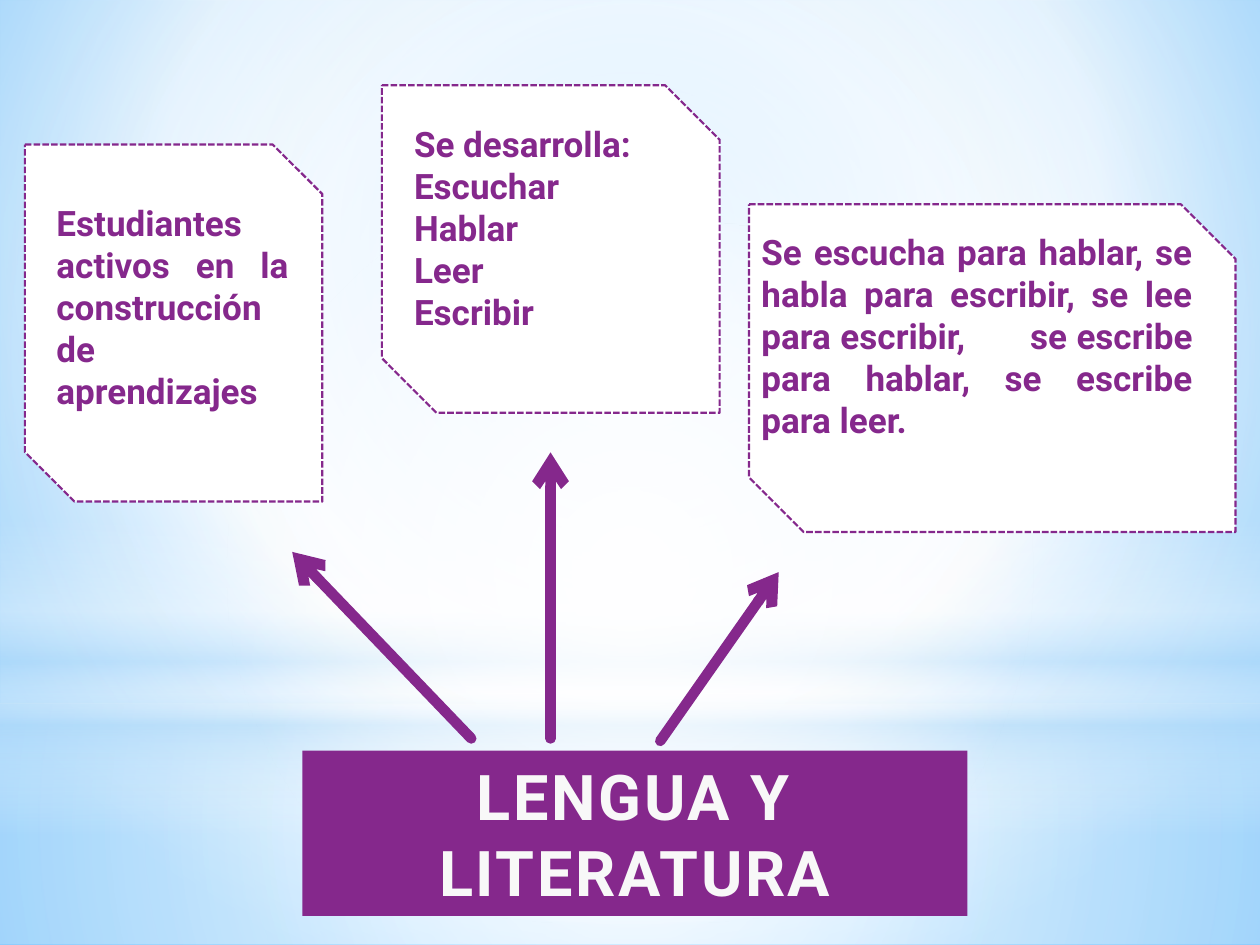
from lxml.etree import SubElement
from pptx import Presentation
from pptx.dml.color import RGBColor
from pptx.enum.dml import MSO_LINE
from pptx.enum.shapes import MSO_CONNECTOR, MSO_SHAPE
from pptx.enum.text import MSO_ANCHOR, MSO_AUTO_SIZE, PP_ALIGN
from pptx.oxml.ns import qn
from pptx.util import Pt

PURPLE = RGBColor(0x85, 0x28, 0x8C)
OFF_WHITE = RGBColor(0xF8, 0xF8, 0xF8)
WHITE = RGBColor(0xFF, 0xFF, 0xFF)
PALE_BLUE = RGBColor(0xB4, 0xDC, 0xFA)
SKY = RGBColor(0x9E, 0xD5, 0xFF)
DEEP_SKY = RGBColor(0x5B, 0xB9, 0xFF)
FONT = "Roboto"
CENTRE = (50, 50, 50, 50)

# Backdrop layers: preset, place, stops (position, colour, opacity), focus
LAYERS = [
    (MSO_SHAPE.RECTANGLE, (0, 402, 720, 138),
     [(0, WHITE, 91), (37, WHITE, 76), (100, PALE_BLUE, 79)], CENTRE),
    (MSO_SHAPE.RECTANGLE, (0, 0, 720, 402),
     [(0, WHITE, 89), (48, WHITE, 62), (100, PALE_BLUE, 79)], CENTRE),
    (MSO_SHAPE.RECTANGLE, (0, 297, 720, 180),
     [(0, WHITE, 0), (29, WHITE, 30), (45, PALE_BLUE, 40),
      (55, WHITE, 26), (65, PALE_BLUE, 60), (100, WHITE, 0)], None),
    (MSO_SHAPE.OVAL, (0, 126, 720, 402),
     [(0, WHITE, 100), (56, WHITE, 0)], CENTRE),
]

ARROWS = [
    ((269.3, 422), (167, 315.4)),
    ((314.6, 422), (314.6, 258.5)),
    ((377.3, 423.4), (445, 326.9)),
]

# Cards: frame place, text place, paragraphs, tab stop
CARDS = [
    ((14.2, 82.6, 170, 204), (25.2, 111.6, 146.9, 128.2),
     ["Estudiantes activos en la construcción de aprendizajes"], None),
    ((218.2, 48.7, 193, 187.2), (229.5, 66.2, 167, 128.2),
     ["Se desarrolla:", "Escuchar", "Hablar", "Leer", "Escribir"], None),
    ((428, 116.8, 278, 187.2), (428, 128.2, 260.6, 157.7),
     ["Se escucha para hablar, se habla para escribir, se lee para "
      "escribir,\tse escribe para hablar, se escribe para leer."], 153),
]


def set_gradient(element, stops, focus):
    """Turn the first solid fill of the element into a gradient."""
    solid = next(element.iter(qn("a:solidFill")))
    gradient = solid.makeelement(qn("a:gradFill"), {"rotWithShape": "1"})
    stop_list = SubElement(gradient, qn("a:gsLst"))
    for position, colour, opacity in stops:
        stop = SubElement(stop_list, qn("a:gs"), pos=str(position * 1000))
        tint = SubElement(stop, qn("a:srgbClr"), val=str(colour))
        if opacity < 100:
            SubElement(tint, qn("a:alpha"), val=str(opacity * 1000))
    if focus:
        circle = SubElement(gradient, qn("a:path"), path="circle")
        sides = {side: str(share * 1000) for side, share in zip("ltrb", focus)}
        SubElement(circle, qn("a:fillToRect"), sides)
    else:
        SubElement(gradient, qn("a:lin"), ang="5400000", scaled="0")
    solid.getparent().replace(solid, gradient)


def add_panel(page, preset, place, colour):
    panel = page.shapes.add_shape(preset, *map(Pt, place))
    panel.shadow.inherit = False
    panel.fill.solid()
    panel.fill.fore_color.rgb = colour
    panel.line.fill.background()
    return panel


def add_span(para, text, size, colour):
    span = para.add_run()
    span.text = text
    span.font.name = FONT
    span.font.size = Pt(size)
    span.font.bold = True
    span.font.color.rgb = colour
    return span


def add_backdrop(page):
    page.background.fill.solid()
    page.background.fill.fore_color.rgb = WHITE
    set_gradient(page.element,
                 [(0, SKY, 100), (60, WHITE, 100), (100, DEEP_SKY, 100)],
                 (20, 10, 20, 60))
    for preset, place, stops, focus in LAYERS:
        layer = add_panel(page, preset, place, WHITE)
        set_gradient(layer.element, stops, focus)


def add_banner(page):
    banner = add_panel(page, MSO_SHAPE.RECTANGLE, (172.8, 429, 380, 94.4), PURPLE)
    frame = banner.text_frame
    frame.word_wrap = True
    frame.auto_size = MSO_AUTO_SIZE.SHAPE_TO_FIT_TEXT
    frame.vertical_anchor = MSO_ANCHOR.MIDDLE
    para = frame.paragraphs[0]
    para.alignment = PP_ALIGN.CENTER
    span = add_span(para, "LENGUA Y LITERATURA", 36, OFF_WHITE)
    span.font._element.set("spc", "150")


def add_arrow(page, start, end):
    arrow = page.shapes.add_connector(
        MSO_CONNECTOR.STRAIGHT, *map(Pt, start + end))
    arrow.line.color.rgb = PURPLE
    arrow.line.width = Pt(6)
    line = arrow.line._get_or_add_ln()
    line.set("cap", "rnd")
    SubElement(line, qn("a:tailEnd"), type="arrow")
    SubElement(arrow.element.spPr, qn("a:effectLst"))


def add_card(page, frame_place, text_place, lines, tab_stop):
    card = add_panel(page, MSO_SHAPE.SNIP_2_DIAG_RECTANGLE, frame_place, WHITE)
    card.line.color.rgb = PURPLE
    card.line.width = Pt(1.25)
    card.line.dash_style = MSO_LINE.SQUARE_DOT

    box = page.shapes.add_textbox(*map(Pt, text_place))
    frame = box.text_frame
    frame.word_wrap = True
    frame.auto_size = MSO_AUTO_SIZE.SHAPE_TO_FIT_TEXT
    for index, line in enumerate(lines):
        para = frame.add_paragraph() if index else frame.paragraphs[0]
        para.alignment = PP_ALIGN.JUSTIFY
        if tab_stop:
            tabs = SubElement(para._p.get_or_add_pPr(), qn("a:tabLst"))
            SubElement(tabs, qn("a:tab"), pos=str(Pt(tab_stop)), algn="l")
        add_span(para, line, 20, PURPLE)


def main():
    deck = Presentation()
    deck.slide_width, deck.slide_height = Pt(720), Pt(540)
    page = deck.slides.add_slide(deck.slide_layouts[6])
    add_backdrop(page)
    add_banner(page)
    for start, end in ARROWS:
        add_arrow(page, start, end)
    for card in CARDS:
        add_card(page, *card)
    deck.save("out.pptx")


if __name__ == "__main__":
    main()
